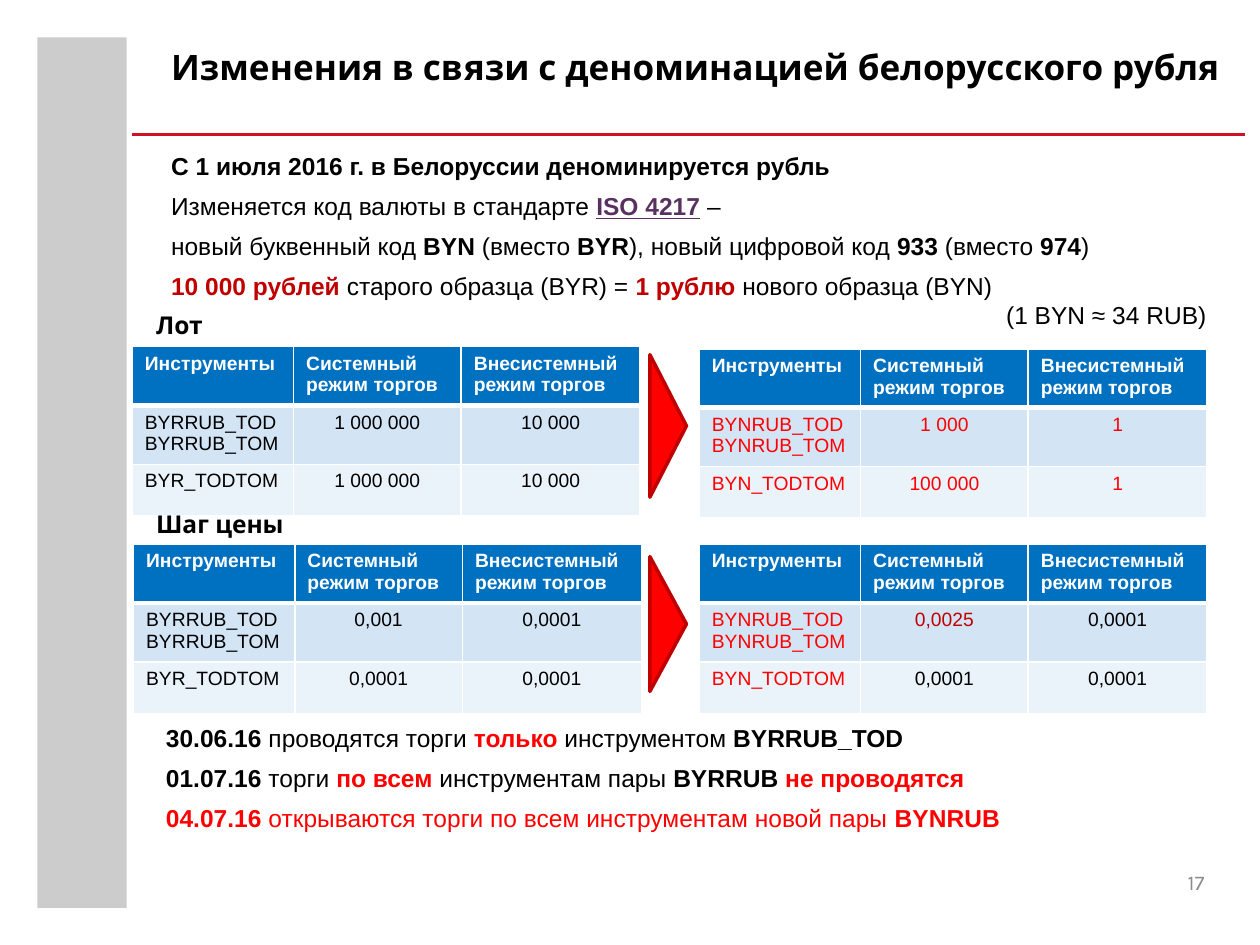
import pptx
import pptx.dml.color
import pptx.enum.shapes
import pptx.enum.text
import pptx.oxml.ns
import pptx.util
from lxml import etree

Pt = pptx.util.Pt
RGBColor = pptx.dml.color.RGBColor
ALIGN = pptx.enum.text.PP_ALIGN
ANCHOR = pptx.enum.text.MSO_ANCHOR
SHAPE = pptx.enum.shapes.MSO_SHAPE
qn = pptx.oxml.ns.qn

BLACK = RGBColor(0x00, 0x00, 0x00)
WHITE = RGBColor(0xFF, 0xFF, 0xFF)
RED = RGBColor(0xFF, 0x00, 0x00)
DARK_RED = RGBColor(0xC0, 0x00, 0x00)
RULE_RED = RGBColor(0xCE, 0x11, 0x26)
BAND_GRAY = RGBColor(0xCC, 0xCC, 0xCC)
NUMBER_GRAY = RGBColor(0x8C, 0x8C, 0x8C)
LINK_PURPLE = RGBColor(0x59, 0x31, 0x60)
HEADER_BLUE = RGBColor(0x00, 0x70, 0xC0)
ROW_FILLS = (HEADER_BLUE, RGBColor(0xD3, 0xE4, 0xF5), RGBColor(0xEA, 0xF2, 0xFA))

HEADINGS = ("Инструменты", "Системный режим торгов", "Внесистемный режим торгов")
COLUMN_WIDTHS = (92.2, 95.8, 102.2)
ROW_HEIGHT = 29.4

BOLD = {"bold": True}
RED_BOLD = {"bold": True, "color": RED}
DARK_RED_BOLD = {"bold": True, "color": DARK_RED}

INTRO = [
    [("С 1 июля 2016 г. в Белоруссии деноминируется рубль", BOLD)],
    [("Изменяется код валюты в стандарте\u00a0", {}),
     ("ISO 4217", {"bold": True, "color": LINK_PURPLE, "underline": True}),
     (" ", BOLD), ("–", {})],
    [("новый буквенный код", {}), (" BYN ", BOLD), ("(вместо", {}), (" BYR", BOLD),
     ("), новый цифровой код", {}), (" 933", BOLD), (" (вместо ", {}),
     ("974", BOLD), (")", {})],
    [("10 000 рублей ", DARK_RED_BOLD), ("старого образца (BYR) = ", {}),
     ("1 рублю ", DARK_RED_BOLD), ("нового образца (BYN)", {})],
    [("(1 BYN ≈ 34 RUB) ", {})],
]

SCHEDULE = [
    [("30.06.16 ", BOLD), ("проводятся торги ", {}), ("только", RED_BOLD),
     (" инструментом ", {}), ("BYRRUB_TOD", BOLD)],
    [("01.07.16", BOLD), (" торги ", {}), ("по всем ", RED_BOLD),
     ("инструментам пары ", {}), ("BYRRUB ", BOLD), ("не проводятся", RED_BOLD)],
    [("04.07.16 ", RED_BOLD),
     ("открываются торги по всем инструментам новой пары ", {"color": RED}),
     ("BYNRUB", RED_BOLD)],
]


def add_run(paragraph, text, size=14, font="Arial", color=BLACK, bold=False, underline=False):
    run = paragraph.add_run()
    run.text = text
    run.font.size = Pt(size)
    run.font.name = font
    run.font.color.rgb = color
    run.font.bold = bold
    run.font.underline = underline


def add_text(slide, left, top, width, height, lines, gap=0):
    box = slide.shapes.add_textbox(Pt(left), Pt(top), Pt(width), Pt(height))
    frame = box.text_frame
    frame.word_wrap = True
    for index, runs in enumerate(lines):
        paragraph = frame.paragraphs[0] if index == 0 else frame.add_paragraph()
        if index and gap:
            paragraph.space_before = Pt(gap)
        for text, style in runs:
            add_run(paragraph, text, **style)
    return frame


def add_heading(slide, text, left, top, width, height, size):
    style = {"size": size, "font": "Karla", "bold": True}
    add_text(slide, left, top, width, height, [[(text, style)]])


def add_page_number(slide, number):
    style = {"size": 12, "font": "Karla", "color": NUMBER_GRAY}
    frame = add_text(slide, 660.2, 488.2, 28.1, 28.1, [[(number, style)]])
    frame.margin_right = frame.margin_bottom = 0
    frame.vertical_anchor = ANCHOR.MIDDLE
    frame.paragraphs[0].alignment = ALIGN.RIGHT


def add_filled_shape(slide, kind, left, top, width, height, fill, outline=None):
    shape = slide.shapes.add_shape(kind, Pt(left), Pt(top), Pt(width), Pt(height))
    shape.shadow.inherit = False
    shape.fill.solid()
    shape.fill.fore_color.rgb = fill
    if outline is None:
        shape.line.fill.background()
    else:
        shape.line.color.rgb = outline
        shape.line.width = Pt(2)
    return shape


def add_change_arrow(slide, center_y, length):
    center_x, depth = 381.8, 20.9
    arrow = add_filled_shape(slide, SHAPE.ISOSCELES_TRIANGLE, center_x - length / 2,
                             center_y - depth / 2, length, depth, RED, DARK_RED)
    arrow.rotation = 90


def add_title_rule(slide):
    rule = slide.shapes.add_connector(pptx.enum.shapes.MSO_CONNECTOR.STRAIGHT,
                                      Pt(75.6), Pt(77), Pt(711.4), Pt(77))
    rule.line.color.rgb = RULE_RED
    rule.line.width = Pt(2)
    etree.SubElement(rule._element.spPr, qn("a:effectLst"))


def set_borders(cell, top=1, bottom=1):
    properties = cell._tc.get_or_add_tcPr()
    for side, width in (("L", 1), ("R", 1), ("T", top), ("B", bottom)):
        line = etree.SubElement(properties, qn("a:ln" + side), w=str(Pt(width)))
        fill = etree.SubElement(line, qn("a:solidFill"))
        etree.SubElement(fill, qn("a:srgbClr"), val=str(WHITE))


def add_rates_table(slide, left, top, currency, values, name_color=BLACK, value_colors=None):
    names = (f"{currency}RUB_TOD\n{currency}RUB_TOM", f"{currency}_TODTOM")
    rows = [HEADINGS] + [(name, *pair) for name, pair in zip(names, values)]
    value_colors = value_colors or {}
    table = slide.shapes.add_table(3, 3, Pt(left), Pt(top), Pt(sum(COLUMN_WIDTHS)),
                                   Pt(3 * ROW_HEIGHT)).table
    for column, width in zip(table.columns, COLUMN_WIDTHS):
        column.width = Pt(width)
    for r, row in enumerate(rows):
        table.rows[r].height = Pt(ROW_HEIGHT)
        for c, text in enumerate(row):
            cell = table.cell(r, c)
            set_borders(cell, top=3 if r == 1 else 1, bottom=3 if r == 0 else 1)
            cell.fill.solid()
            cell.fill.fore_color.rgb = ROW_FILLS[r]
            if r == 0:
                color = WHITE
            elif c == 0:
                color = name_color
            else:
                color = value_colors.get(text, BLACK)
            for index, line in enumerate(text.split("\n")):
                paragraphs = cell.text_frame.paragraphs
                paragraph = paragraphs[0] if index == 0 else cell.text_frame.add_paragraph()
                if r and c:
                    paragraph.alignment = ALIGN.CENTER
                add_run(paragraph, line, size=11, color=color, bold=r == 0)


def main():
    deck = pptx.Presentation()
    deck.slide_width, deck.slide_height = Pt(720), Pt(540)
    slide = deck.slides.add_slide(deck.slide_layouts[6])

    add_filled_shape(slide, SHAPE.RECTANGLE, 21.3, 21.3, 51.1, 497.5, BAND_GRAY)
    add_page_number(slide, "17")
    add_title_rule(slide)
    add_heading(slide, "Изменения в связи с деноминацией белорусского рубля",
                90.7, 22.3, 617.8, 59.8, 20)

    intro = add_text(slide, 90.7, 82.8, 609.8, 110.2, INTRO, gap=6)
    exchange_rate = intro.paragraphs[-1]
    exchange_rate.alignment = ALIGN.RIGHT
    exchange_rate.space_before = Pt(0)

    add_rates_table(slide, 75.6, 198, "BYR", [("1 000 000", "10 000")] * 2)
    add_heading(slide, "Лот", 82.1, 173.5, 614.2, 24.5, 14)
    add_change_arrow(slide, 243.4, 81.4)
    add_heading(slide, "Шаг цены", 82.1, 287.3, 614.2, 24.5, 14)
    add_change_arrow(slide, 356.6, 77)
    add_rates_table(slide, 399.6, 199.4, "BYN", [("1 000", "1"), ("100 000", "1")], RED,
                    {"1 000": RED, "100 000": RED, "1": RED})
    add_rates_table(slide, 76.3, 311, "BYR", [("0,001", "0,0001"), ("0,0001", "0,0001")])
    add_rates_table(slide, 399.6, 311, "BYN", [("0,0025", "0,0001"), ("0,0001", "0,0001")],
                    RED, {"0,0025": DARK_RED})

    add_text(slide, 87.8, 409.7, 609.8, 70.6, SCHEDULE, gap=6)
    deck.save("out.pptx")


if __name__ == "__main__":
    main()
